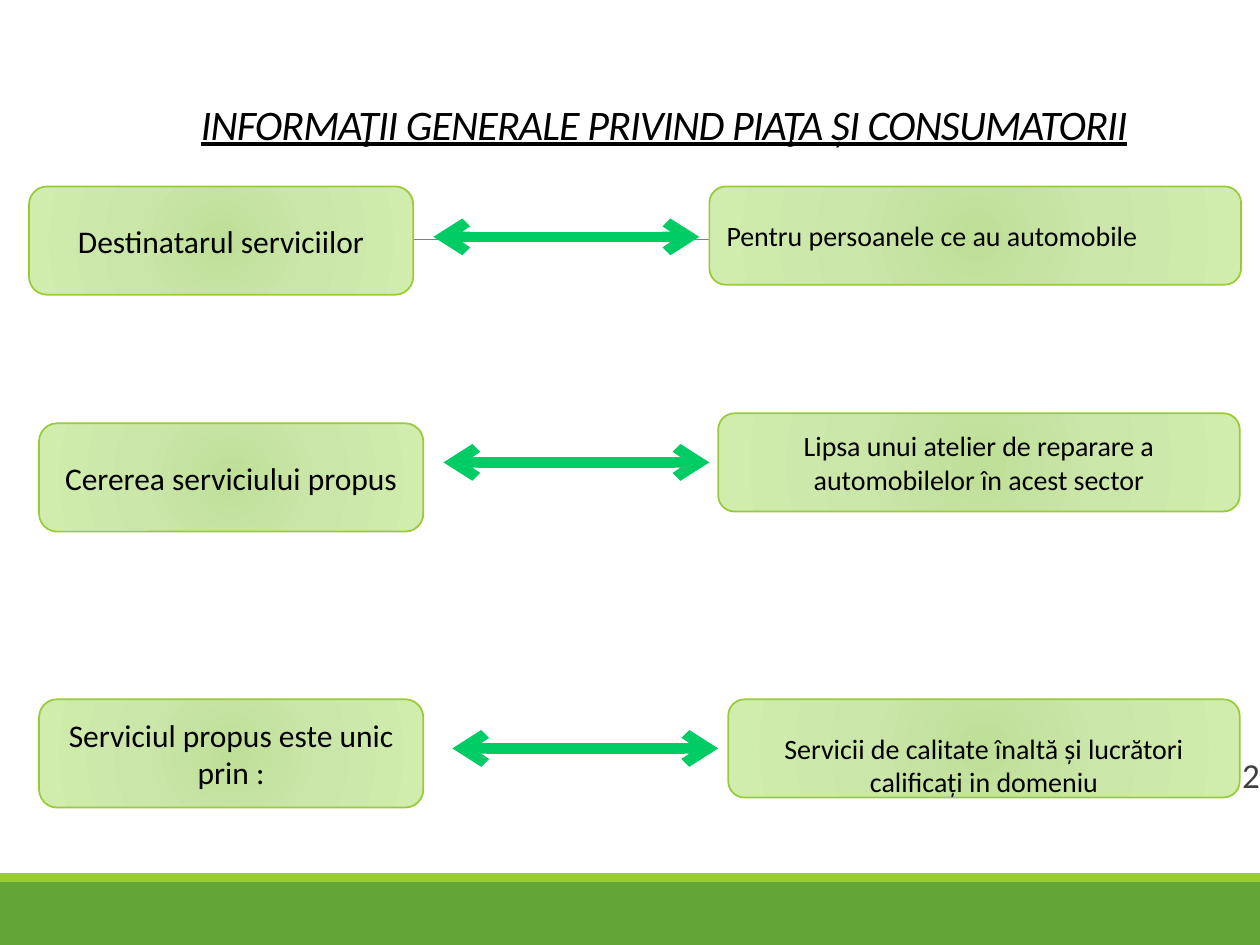
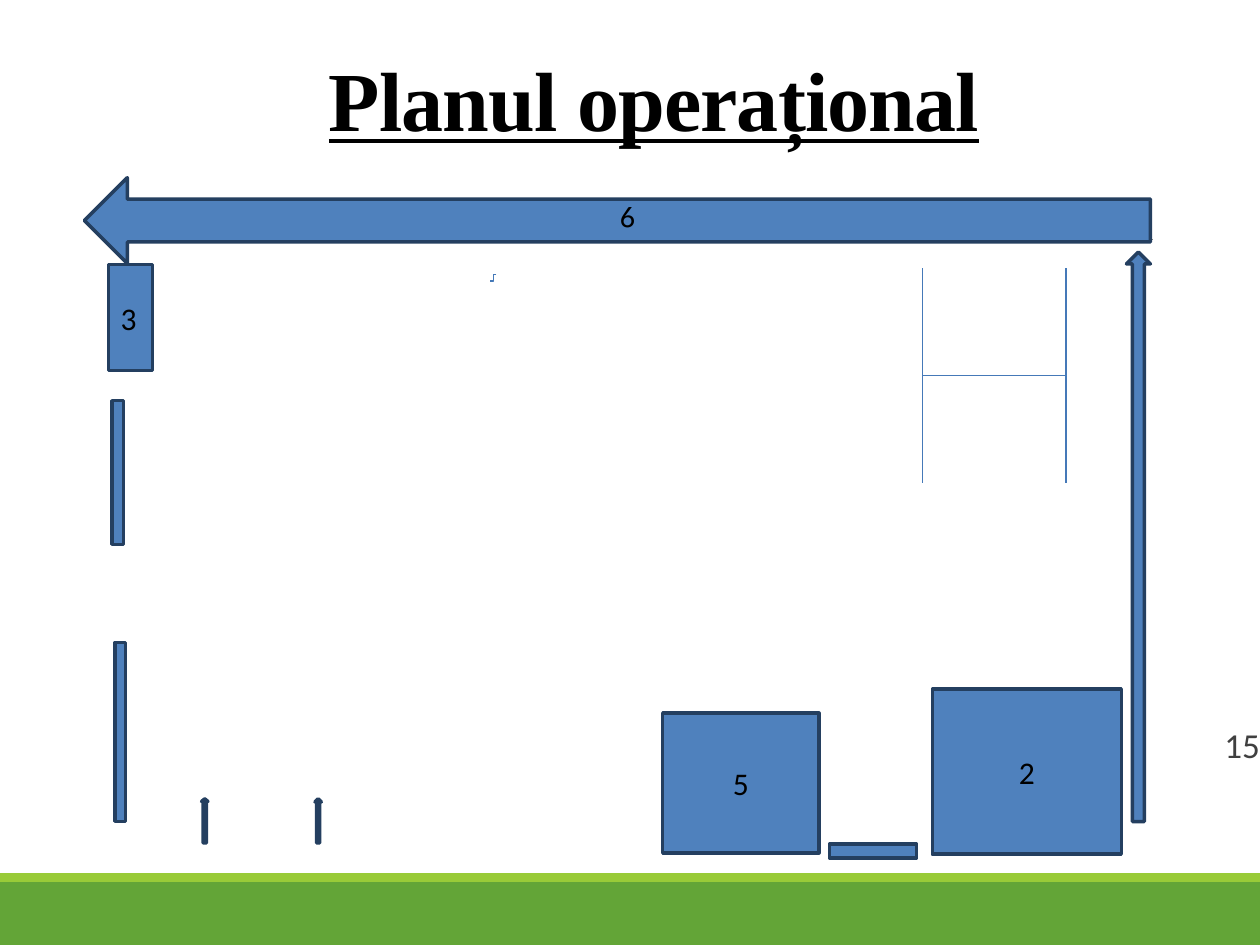
"""Build two slides: market information and the operational plan."""
from dataclasses import dataclass
from typing import NamedTuple

from pptx import Presentation
from pptx import util as u
from pptx.dml.color import RGBColor
from pptx.enum import shapes, text
from pptx.oxml import parse_xml
from pptx.oxml.ns import nsdecls, qn

WIDTH, HEIGHT = u.Inches(10), u.Inches(7.5)
COLUMNS, ROWS = 100, 75
KIND = shapes.MSO_SHAPE
ALIGN = text.PP_ALIGN
ANCHOR = text.MSO_ANCHOR


@dataclass(frozen=True)
class Theme:
    """Colours, fonts and type sizes of the deck."""
    band: str = "63A537"
    trim: str = "99CB38"
    rule: str = "808080"
    ink: str = "000000"
    number: str = "404040"
    arrow: str = "00CC66"
    block: str = "4F81BD"
    block_edge: str = "243F60"
    bend: str = "4579B8"
    glow: tuple = ((0, "BEDF97"), (45, "CAE6A9"), (100, "D0EDAE"))
    font: str = "Calibri"
    display_font: str = "Times New Roman"
    answer_size: int = 16
    label_size: int = 18
    number_size: int = 20
    title_size: int = 24
    display_size: int = 48


THEME = Theme()


class Area(NamedTuple):
    """A rectangle in grid columns and rows."""
    left: float
    top: float
    width: float
    height: float


class Topic(NamedTuple):
    """A topic, its answer and the arrow between them."""
    label: str
    label_left: float
    label_top: float
    arrow_left: float
    arrow_row: float
    answer: str
    answer_area: Area
    align: ALIGN = ALIGN.CENTER
    insets: tuple = (0.05, 0.05)


class Block(NamedTuple):
    """A blue piece of the floor plan."""
    kind: KIND
    area: Area
    label: str = ""
    rotation: float = 0
    adjustments: tuple = ()
    align: ALIGN = ALIGN.CENTER


class Bend(NamedTuple):
    """An elbow connector given before its rotation."""
    start: tuple
    end: tuple
    rotation: int = 0


TOPICS = (
    Topic("Destinatarul serviciilor", 2.3, 14.8, 34.4, 18.8,
          "Pentru persoanele ce au automobile", Area(56.3, 14.8, 42.2, 7.8), ALIGN.LEFT),
    Topic("Cererea serviciului propus", 3.1, 33.6, 35.2, 36.7,
          "Lipsa unui atelier de reparare a automobilelor în acest sector",
          Area(57, 32.8, 41.4, 7.8)),
    Topic("Serviciul propus este unic prin :", 3.1, 55.5, 35.9, 59.4,
          "Servicii de calitate înaltă și lucrători calificați in domeniu",
          Area(57.8, 55.5, 40.6, 7.8), insets=(0.26, 0)),
)

BLOCKS = (
    Block(KIND.RECTANGLE, Area(74, 54.7, 15, 13.1), "2"),
    Block(KIND.RECTANGLE, Area(52.6, 56.6, 12.4, 11.1), "5"),
    Block(KIND.RECTANGLE, Area(8.6, 21, 3.5, 8.4), "3", align=ALIGN.LEFT),
    Block(KIND.UP_ARROW, Area(16, 63.4, 0.5, 3.5), adjustments=(0.5, 0.41)),
    Block(KIND.UP_ARROW, Area(25, 63.4, 0.5, 3.5), adjustments=(0.5, 0.5)),
    Block(KIND.RIGHT_ARROW, Area(6.7, 14.1, 84.6, 6.8), "9", 180),
    Block(KIND.UP_ARROW, Area(89.4, 20, 1.9, 45.2), adjustments=(0.5, 0.5)),
    Block(KIND.MATH_MINUS, Area(1.6, 35.6, 15.5, 3.8), rotation=90),
    Block(KIND.MATH_MINUS, Area(-0.1, 56.3, 19.3, 3.6), rotation=90),
    Block(KIND.MATH_MINUS, Area(64.6, 65.2, 9.4, 4.7)),
)

BENDS = (
    Bend((70.4, 24.1), (87.4, 35.5), 90),
    Bend((39.4, 21.8), (38.9, 22.3)),
    Bend((87.4, 24.1), (70.4, 35.5), 270),
)


def across(columns: float) -> int:
    """Convert columns to a length."""
    return round(WIDTH * columns / COLUMNS)


def down(rows: float) -> int:
    """Convert rows to a length."""
    return round(HEIGHT * rows / ROWS)


def frame(area: Area) -> tuple:
    """Convert an area to left, top, width and height."""
    return across(area.left), down(area.top), across(area.width), down(area.height)


def write(box, words: str, *, size: int, font: str = THEME.font, color: str = THEME.ink,
          align=ALIGN.CENTER, anchor=ANCHOR.MIDDLE, bold=False, italic=False,
          underline=False, leading=None, tracking=None, insets=(0.05, 0.05)) -> None:
    """Put formatted text into a shape."""
    body = box.text_frame
    body.word_wrap = True
    body.auto_size = text.MSO_AUTO_SIZE.NONE
    body.vertical_anchor = anchor
    body.margin_top, body.margin_bottom = map(u.Inches, insets)
    para = body.paragraphs[0]
    para.alignment = align
    if leading:
        para.line_spacing = leading
    span = para.add_run()
    span.text = words
    style = span.font
    style.name, style.size = font, u.Pt(size)
    style.bold, style.italic, style.underline = bold, italic, underline
    style.color.rgb = RGBColor.from_string(color)
    if tracking:
        style._element.set("spc", str(round(tracking * 100)))


def add_box(page, kind, area: Area, fill: str = "", edge: str = "", weight: float = 0):
    """Add a preset shape with a plain fill and an optional edge."""
    box = page.shapes.add_shape(kind, *frame(area))
    box.shadow.inherit = False
    if fill:
        box.fill.solid()
        box.fill.fore_color.rgb = RGBColor.from_string(fill)
    if edge:
        box.line.color.rgb = RGBColor.from_string(edge)
        box.line.width = u.Pt(weight)
    else:
        box.line.fill.background()
    return box


def add_glow_box(page, kind, area: Area):
    """Add a box with a radial green fill."""
    box = add_box(page, kind, area, edge=THEME.trim, weight=1)
    box.fill.gradient()
    stops = "".join(f'<a:gs pos="{place * 1000}"><a:srgbClr val="{color}"/></a:gs>'
                    for place, color in THEME.glow)
    glow = parse_xml(f'<a:gradFill {nsdecls("a")} rotWithShape="1"><a:gsLst>{stops}</a:gsLst>'
                     '<a:path path="circle"><a:fillToRect l="50000" t="50000" r="50000" '
                     'b="50000"/></a:path></a:gradFill>')
    properties = box.element.spPr
    properties.replace(properties.find(qn("a:gradFill")), glow)
    return box


def add_line(page, start: tuple, end: tuple, color: str, weight: float, *,
             kind=shapes.MSO_CONNECTOR.STRAIGHT, arrows=False, rotation=0) -> None:
    """Add a connector, optionally bent, turned or with two arrowheads."""
    line = page.shapes.add_connector(kind, across(start[0]), down(start[1]),
                                     across(end[0]), down(end[1]))
    line.line.color.rgb = RGBColor.from_string(color)
    line.line.width = u.Pt(weight)
    properties = line.element.spPr
    if arrows:
        for tip in ("headEnd", "tailEnd"):
            properties.find(qn("a:ln")).append(
                parse_xml(f'<a:{tip} {nsdecls("a")} type="arrow"/>'))
    if rotation:
        properties.find(qn("a:xfrm")).set("rot", str(rotation * 60000))
    properties.append(parse_xml(f'<a:effectLst {nsdecls("a")}/>'))


def add_page(deck, title: str, title_left: float, number: str, number_top: float, **style):
    """Add a page with bands, rule, title and page number."""
    page = deck.slides.add_slide(deck.slide_layouts[5])
    add_box(page, KIND.RECTANGLE, Area(0, 70, COLUMNS, 5), THEME.band)
    add_box(page, KIND.RECTANGLE, Area(0, 69.3, COLUMNS, 0.7), THEME.trim)
    add_line(page, (9.8, 19), (91.5, 19), THEME.rule, 0.5)
    heading = page.shapes.title
    heading.left, heading.top, heading.width, heading.height = frame(
        Area(title_left, 2.3, 85, 10))
    write(heading, title, anchor=ANCHOR.BOTTOM, underline=True, leading=0.85,
          tracking=-0.5, **style)
    box = page.shapes.add_textbox(*frame(Area(90, number_top, 10, 4)))
    box.text_frame.margin_left = box.text_frame.margin_right = 0
    write(box, number, size=THEME.number_size, color=THEME.number, align=ALIGN.RIGHT)
    return page


def add_market_page(deck) -> None:
    """Add the page on market and consumers."""
    page = add_page(deck, "INFORMAŢII GENERALE PRIVIND PIAŢA ȘI CONSUMATORII", 10.2,
                    "2", 59.5, size=THEME.title_size, italic=True)
    for topic in TOPICS:
        label = add_glow_box(page, KIND.ROUNDED_RECTANGLE,
                             Area(topic.label_left, topic.label_top, 30.5, 8.6))
        write(label, topic.label, size=THEME.label_size)
        add_line(page, (topic.arrow_left, topic.arrow_row),
                 (topic.arrow_left + 21.1, topic.arrow_row), THEME.arrow, 6, arrows=True)
        answer = add_glow_box(page, KIND.FLOWCHART_ALTERNATE_PROCESS, topic.answer_area)
        write(answer, topic.answer, size=THEME.answer_size, align=topic.align,
              insets=topic.insets)


def add_plan_page(deck) -> None:
    """Add the page with the floor plan."""
    page = add_page(deck, "Planul operațional", 9.4, "15", 57.1,
                    size=THEME.display_size, font=THEME.display_font, bold=True)
    for bend in BENDS:
        add_line(page, bend.start, bend.end, THEME.bend, 0.75,
                 kind=shapes.MSO_CONNECTOR.ELBOW, rotation=bend.rotation)
    for block in BLOCKS:
        box = add_box(page, block.kind, block.area, THEME.block, THEME.block_edge, 2)
        box.rotation = block.rotation
        for index, value in enumerate(block.adjustments):
            box.adjustments[index] = value
        if block.label:
            write(box, block.label, size=THEME.label_size, align=block.align)


def main() -> None:
    """Build and save the deck."""
    deck = Presentation()
    deck.slide_width, deck.slide_height = WIDTH, HEIGHT
    add_market_page(deck)
    add_plan_page(deck)
    deck.save("out.pptx")


if __name__ == "__main__":
    main()
